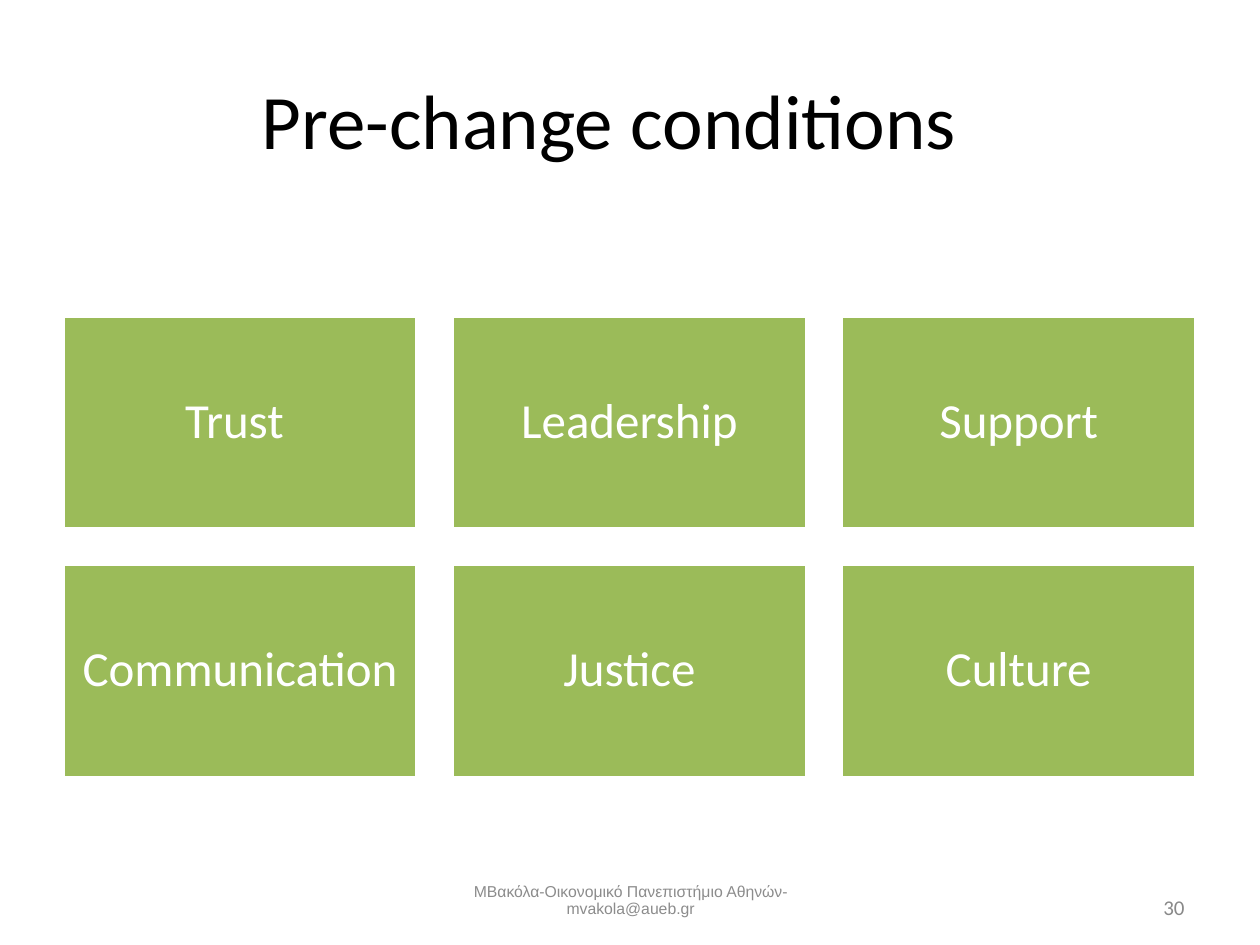
"""Build the pre-change conditions slide."""
from pptx import Presentation
from pptx.dml.color import RGBColor
from pptx.enum import shapes, text
from pptx.util import Inches, Pt

CONDITIONS = ["Trust ", "Leadership", "Support", "Communication", "Justice", "Culture"]
COLUMNS = 3
LEFT, TOP = 0.5, 2.51
WIDTH, HEIGHT = 2.81, 1.69
GAP = 0.28


def color(value):
    """Turn a hex string into a colour."""
    return RGBColor.from_string(value)


def set_all(target, values):
    """Set every named attribute on the target."""
    for name, value in values.items():
        setattr(target, name, value)


def write(box, words, size, font, ink, frame_format, para_format):
    """Put one formatted paragraph into a box."""
    frame = box.text_frame
    set_all(frame, {"word_wrap": True, **frame_format})
    para = frame.paragraphs[0]
    set_all(para, para_format)
    span = para.add_run()
    span.text = words
    set_all(span.font, {"size": Pt(size), "name": font})
    span.font.color.rgb = color(ink)


def add_title(page, words):
    """Fill and place the title placeholder."""
    title = page.shapes.title
    set_all(title, {"left": Inches(0.5), "top": Inches(0.19),
                    "width": Inches(8.67), "height": Inches(1.51)})
    write(title, words, 44, "Calibri", "000000",
          {"vertical_anchor": text.MSO_ANCHOR.MIDDLE},
          {"alignment": text.PP_ALIGN.CENTER})


def add_label(page, place, words, size, font, ink, anchor, para_format):
    """Add a small text box at the foot of the page."""
    box = page.shapes.add_textbox(*map(Inches, place))
    write(box, words, size, font, ink, {"vertical_anchor": anchor},
          {"space_after": Pt(6), **para_format})


def add_card(group, left, top, words):
    """Add one green card with its condition."""
    card = group.shapes.add_shape(shapes.MSO_SHAPE.RECTANGLE, Inches(left),
                                  Inches(top), Inches(WIDTH), Inches(HEIGHT))
    card.shadow.inherit = False
    card.fill.solid()
    card.fill.fore_color.rgb = color("9BBB59")
    card.line.color.rgb = color("FFFFFF")
    card.line.width = Pt(2)
    margins = {f"margin_{side}": Inches(0.12)
               for side in ("left", "right", "top", "bottom")}
    write(card, words, 28, "Calibri", "FFFFFF",
          {"vertical_anchor": text.MSO_ANCHOR.MIDDLE, **margins},
          {"alignment": text.PP_ALIGN.CENTER, "line_spacing": 0.9,
           "space_after": Pt(10)})


def add_cards(page):
    """Lay the conditions out in a grid."""
    group = page.shapes.add_group_shape()
    for index, words in enumerate(CONDITIONS):
        row, column = divmod(index, COLUMNS)
        add_card(group, LEFT + column * (WIDTH + GAP),
                 TOP + row * (HEIGHT + GAP), words)


def main():
    """Build and save the deck."""
    deck = Presentation()
    set_all(deck, {"slide_width": Inches(10), "slide_height": Inches(7.5)})
    page = deck.slides.add_slide(deck.slide_layouts[5])
    add_title(page, "Pre-change conditions")
    add_label(page, (7.17, 6.83, 2.33, 0.52), "30", 12, "Calibri", "898989",
              text.MSO_ANCHOR.BOTTOM, {"alignment": text.PP_ALIGN.RIGHT})
    add_label(page, (3.42, 6.95, 3.17, 0.4),
              "ΜΒακόλα-Οικονομικό Πανεπιστήμιο Αθηνών-mvakola@aueb.gr",
              9, "Arial", "8C8C8C", text.MSO_ANCHOR.MIDDLE,
              {"alignment": text.PP_ALIGN.CENTER, "line_spacing": 0.9})
    add_cards(page)
    deck.save("out.pptx")


if __name__ == "__main__":
    main()
